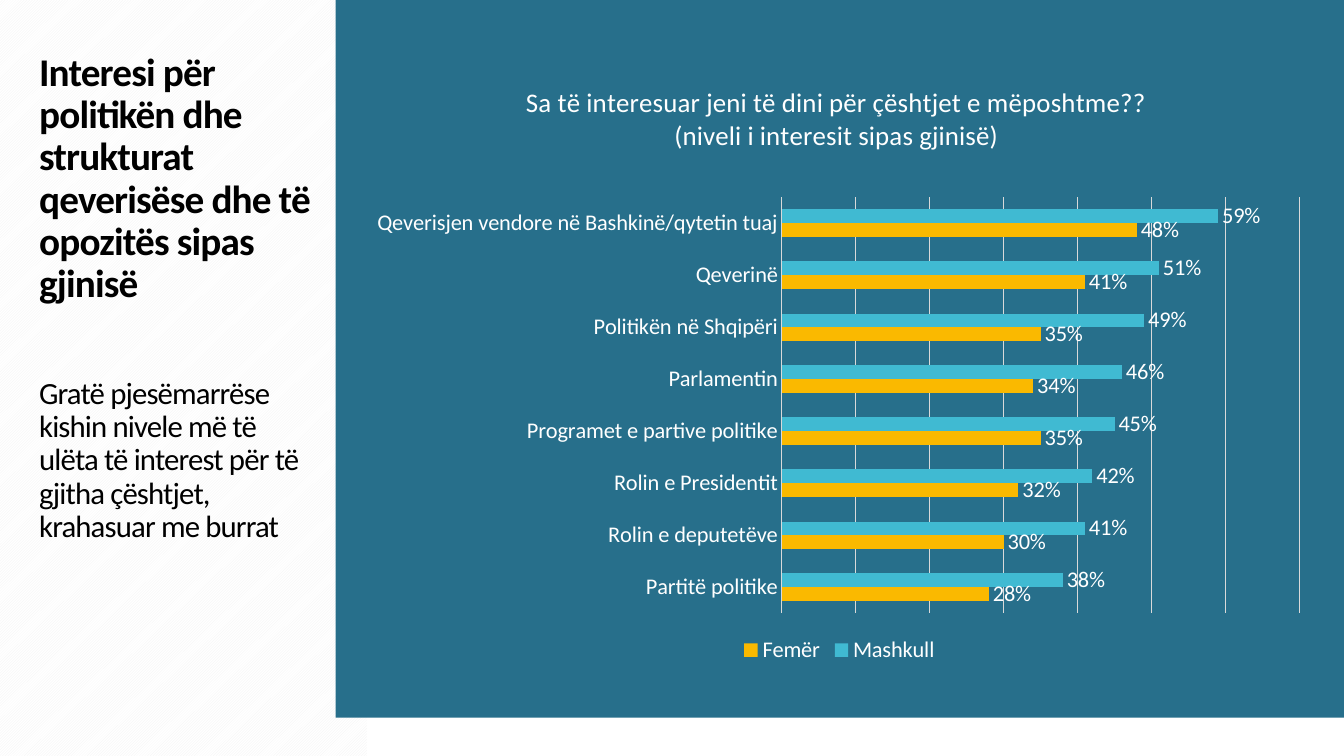
from lxml import etree
from pptx import Presentation
from pptx.chart.data import CategoryChartData
from pptx.dml.color import RGBColor
from pptx.enum.chart import XL_CHART_TYPE, XL_LABEL_POSITION, XL_LEGEND_POSITION, XL_TICK_MARK
from pptx.enum.dml import MSO_PATTERN
from pptx.enum.shapes import MSO_SHAPE
from pptx.enum.text import MSO_ANCHOR
from pptx.oxml.ns import qn
from pptx.util import Inches, Pt

RECTANGLE = MSO_SHAPE.RECTANGLE
DIAGONAL = MSO_PATTERN.DARK_UPWARD_DIAGONAL
BAR_CLUSTERED = XL_CHART_TYPE.BAR_CLUSTERED
OUTSIDE_END = XL_LABEL_POSITION.OUTSIDE_END
BOTTOM = XL_LEGEND_POSITION.BOTTOM
NO_TICK = XL_TICK_MARK.NONE
TOP = MSO_ANCHOR.TOP

HEADING = "Interesi për politikën dhe strukturat qeverisëse dhe të opozitës sipas gjinisë"
FINDING = ("Gratë pjesëmarrëse kishin nivele më të ulëta të interest për të gjitha "
           "çështjet, krahasuar me burrat")
CHART_TITLE = ["Sa të interesuar jeni të dini për çështjet e mëposhtme??",
               "(niveli i interesit sipas gjinisë)"]
INTEREST = [  # topic, men, women
    ("Qeverisjen vendore në Bashkinë/qytetin tuaj", 0.59, 0.48),
    ("Qeverinë", 0.51, 0.41),
    ("Politikën në Shqipëri", 0.49, 0.35),
    ("Parlamentin", 0.46, 0.34),
    ("Programet e partive politike", 0.45, 0.35),
    ("Rolin e Presidentit", 0.42, 0.32),
    ("Rolin e deputetëve", 0.41, 0.30),
    ("Partitë politike", 0.38, 0.28),
]

THEME = {
    "font": "Calibri",
    "black": RGBColor.from_string("000000"),
    "white": RGBColor.from_string("FFFFFF"),
    "stripe": RGBColor.from_string("F2F2F2"),
    "panel": RGBColor.from_string("276F8B"),
    "grid": RGBColor.from_string("D9D9D9"),
    "men": RGBColor.from_string("40BAD2"),
    "women": RGBColor.from_string("FAB900"),
    "heading": 28, "finding": 22, "chart_title": 19.2, "chart": 16,
}
SERIES = [("Mashkull", "men"), ("Femër", "women")]


def style_font(font, size, color, bold=False):
    font.name = THEME["font"]
    font.size = Pt(THEME[size])
    font.color.rgb = THEME[color]
    font.bold = bold


def add_rectangle(slide, left, top, width, height):
    shape = slide.shapes.add_shape(RECTANGLE, Inches(left), Inches(top),
                                   Inches(width), Inches(height))
    shape.shadow.inherit = False
    shape.line.fill.background()
    return shape


def add_background(slide):
    strip = add_rectangle(slide, -1.93, 1.93, 7.5, 3.64)
    strip.rotation = 270
    strip.fill.patterned()
    strip.fill.pattern = DIAGONAL
    strip.fill.fore_color.rgb = THEME["stripe"]
    strip.fill.back_color.rgb = THEME["white"]

    panel = add_rectangle(slide, 3.33, 0, 10, 7.12)
    panel.fill.solid()
    panel.fill.fore_color.rgb = THEME["panel"]


def add_message(slide):
    box = slide.shapes.add_textbox(Inches(0.29), Inches(0.47), Inches(2.91), Inches(5.79))
    frame = box.text_frame
    frame.word_wrap = True
    frame.vertical_anchor = TOP
    heading = frame.paragraphs[0]
    finding = frame.add_paragraph()
    finding.space_before = Pt(51)
    for paragraph, text, size in ((heading, HEADING, "heading"), (finding, FINDING, "finding")):
        paragraph.line_spacing = 0.9
        run = paragraph.add_run()
        run.text = text
        style_font(run.font, size, "black", bold=size == "heading")
        run._r.get_or_add_rPr().set("spc", "-60")


def set_layout(element, **settings):
    """Place a chart part by fractions of the chart area."""
    layout = element.find(qn("c:layout"))
    if layout is None:
        layout = etree.Element(qn("c:layout"))
        text = element.find(qn("c:tx"))
        element.insert(0 if text is None else element.index(text) + 1, layout)
    for child in list(layout):
        layout.remove(child)
    manual = etree.SubElement(layout, qn("c:manualLayout"))
    for name, value in settings.items():
        etree.SubElement(manual, qn("c:" + name)).set("val", str(value))


def add_interest_chart(slide):
    data = CategoryChartData(number_format="0%")
    topics, *columns = zip(*INTEREST)
    data.categories = topics
    for (name, _), values in zip(SERIES, columns):
        data.add_series(name, values)
    chart = slide.shapes.add_chart(BAR_CLUSTERED, Inches(3.57), Inches(0.56),
                                   Inches(9.51), Inches(6.07), data).chart
    style_font(chart.font, "chart", "white")

    title = chart.chart_title
    frame = title.text_frame
    for index, line in enumerate(CHART_TITLE):
        paragraph = frame.add_paragraph() if index else frame.paragraphs[0]
        run = paragraph.add_run()
        run.text = line
        style_font(run.font, "chart_title", "white")
    title.include_text_frame = True if hasattr(title, "include_text_frame") else None
    set_layout(title._element, xMode="edge", yMode="edge", x=0.17, y=0.04)

    topic_axis = chart.category_axis
    topic_axis.reverse_order = True
    topic_axis.major_tick_mark = NO_TICK
    topic_axis.format.line.color.rgb = THEME["grid"]
    topic_axis.format.line.width = Pt(0.75)
    style_font(topic_axis.tick_labels.font, "chart", "white")

    share_axis = chart.value_axis
    share_axis.visible = False
    share_axis.minimum_scale, share_axis.maximum_scale = 0, 0.7
    share_axis.major_unit = 0.1
    share_axis.has_major_gridlines = True
    share_axis.major_gridlines.format.line.color.rgb = THEME["grid"]
    share_axis.major_gridlines.format.line.width = Pt(0.75)

    plot = chart.plots[0]
    plot.gap_width = 182
    plot.overlap = 0
    plot.vary_by_categories = False
    for series, (_, color) in zip(plot.series, SERIES):
        series.format.fill.solid()
        series.format.fill.fore_color.rgb = THEME[color]
        labels = series.data_labels
        labels.show_value = True
        labels.number_format = "0%"
        labels.number_format_is_linked = False
        labels.position = OUTSIDE_END
        style_font(labels.font, "chart", "white")
    plot_area = chart._chartSpace.chart.plotArea
    set_layout(plot_area, layoutTarget="inner", xMode="edge", yMode="edge",
               x=0.44, y=0.23, w=0.54, h=0.68)

    chart.has_legend = True
    chart.legend.position = BOTTOM
    chart.legend.include_in_layout = False
    style_font(chart.legend.font, "chart", "white")


def main():
    presentation = Presentation()
    presentation.slide_width = Inches(13.33)
    presentation.slide_height = Inches(7.5)
    slide = presentation.slides.add_slide(presentation.slide_layouts[6])
    add_background(slide)
    add_message(slide)
    add_interest_chart(slide)
    presentation.save("out.pptx")


if __name__ == "__main__":
    main()
